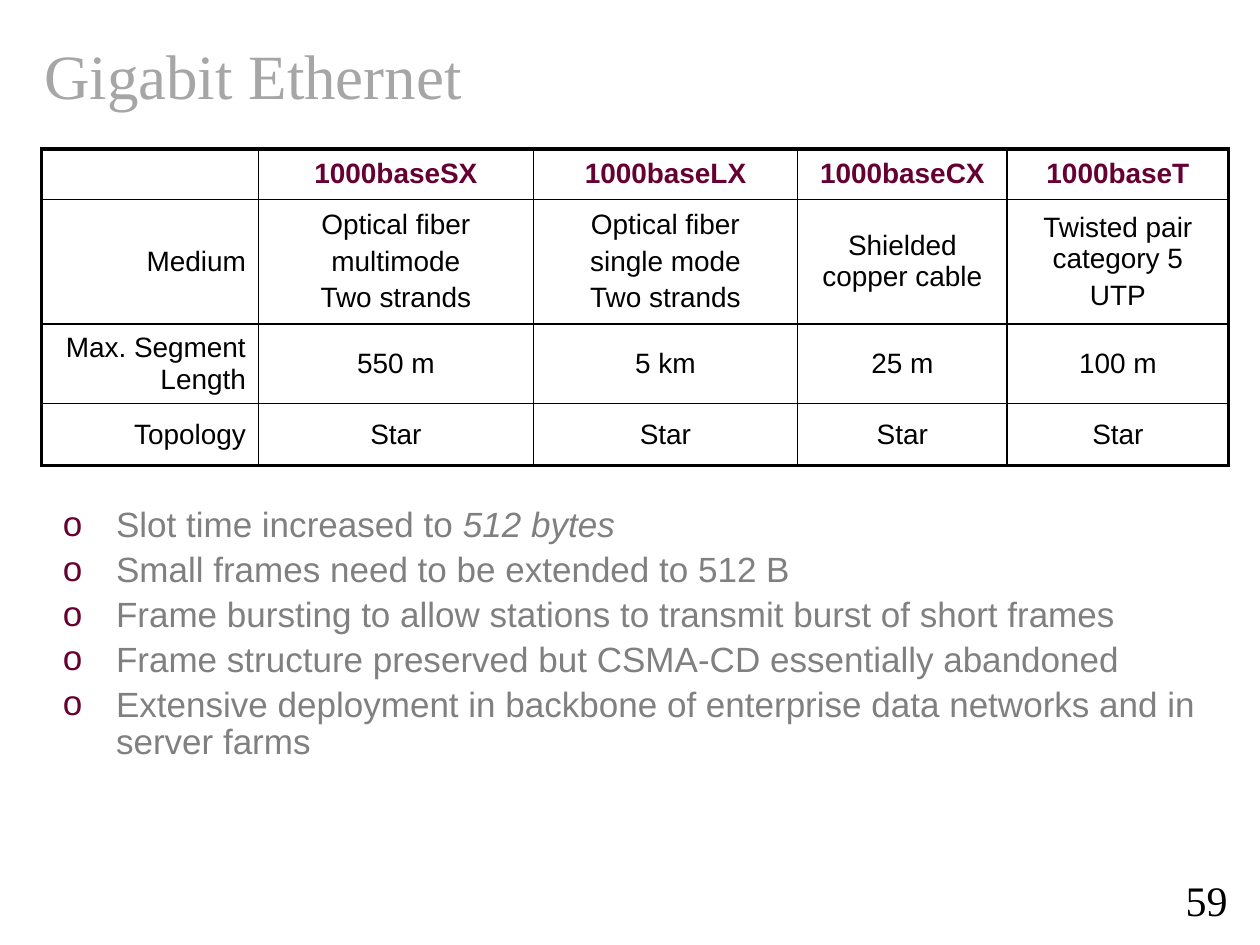
from dataclasses import dataclass

from lxml import etree
from pptx import Presentation
from pptx import util as u
from pptx.dml.color import RGBColor
from pptx.enum import text
from pptx.oxml import ns


@dataclass(frozen=True)
class Theme:
    serif: str = "Times New Roman"
    sans: str = "Arial"
    black: str = "000000"
    accent: str = "660033"
    title_gray: str = "A6A6A6"
    body_gray: str = "808080"
    title_size: float = 36
    number_size: float = 24
    body_size: float = 20
    table_size: float = 16
    thick: float = 2.25
    thin: float = 1


T = Theme()
AL = text.PP_ALIGN
MIDDLE = text.MSO_ANCHOR.MIDDLE

COLUMNS = [4.37, 5.54, 5.33, 4.22, 4.47]
ROWS = [0.87, 2.38, 1.51, 1.24]
CELLS = [
    ["", "1000baseSX", "1000baseLX", "1000baseCX", "1000baseT"],
    ["Medium", "Optical fiber\nmultimode\nTwo strands",
     "Optical fiber\nsingle mode\nTwo strands",
     "Shielded copper cable", "Twisted pair category 5\nUTP"],
    ["Max. Segment Length", "550 m", "5 km", "25 m", "100 m"],
    ["Topology"] + ["Star"] * 4,
]
BULLETS = [
    [("Slot time increased to ", False), ("512 bytes", True)],
    [("Small frames need to be extended to 512 B", False)],
    [("Frame bursting to allow stations to transmit burst of short frames", False)],
    [("Frame structure preserved but CSMA-CD essentially abandoned", False)],
    [("Extensive deployment in backbone of enterprise data networks and in "
      "server farms", False)],
]


def add_run(p, words, color, **fmt):
    r = p.add_run()
    r.text = words
    r.font.color.rgb = RGBColor.from_string(color)
    for key, value in fmt.items():
        setattr(r.font, key, value)


def add_box(slide, box, anchor=text.MSO_ANCHOR.TOP):
    sp = slide.shapes.add_textbox(*map(u.Cm, box))
    tf = sp.text_frame
    tf.word_wrap = True
    tf.vertical_anchor = anchor
    return tf


def add_line(slide, box, words, color, size, align):
    p = add_box(slide, box, MIDDLE).paragraphs[0]
    p.alignment = align
    add_run(p, words, color, name=T.serif, size=u.Pt(size))


def set_borders(cell, widths):
    tcPr = cell._tc.get_or_add_tcPr()
    for side, width in widths.items():
        ln = etree.SubElement(tcPr, ns.qn(f"a:ln{side}"), w=str(u.Pt(width)))
        fill = etree.SubElement(ln, ns.qn("a:solidFill"))
        etree.SubElement(fill, ns.qn("a:srgbClr"), val=T.black)


def fill_cell(cell, words, align, color, bold):
    cell.vertical_anchor = MIDDLE
    tf = cell.text_frame
    for i, line in enumerate(words.split("\n")):
        p = tf.add_paragraph() if i else tf.paragraphs[0]
        p.alignment = align
        if i:
            p.space_before = u.Pt(3.2)
        add_run(p, line, color, name=T.sans, size=u.Pt(T.table_size), bold=bold)


def add_comparison(slide, left, top):
    frame = slide.shapes.add_table(
        len(ROWS), len(COLUMNS), u.Cm(left), u.Cm(top),
        u.Cm(sum(COLUMNS)), u.Cm(sum(ROWS)))
    tbl = frame.table
    tbl.first_row = tbl.horz_banding = False
    for col, width in zip(tbl.columns, COLUMNS):
        col.width = u.Cm(width)
    for row, height in zip(tbl.rows, ROWS):
        row.height = u.Cm(height)
    last_row, last_col = len(ROWS) - 1, len(COLUMNS) - 1
    for i, row in enumerate(CELLS):
        for j, words in enumerate(row):
            cell = tbl.cell(i, j)
            outer = {"L": j == 0, "R": j == last_col,
                     "T": i == 0, "B": i == last_row}
            set_borders(cell, {side: T.thick if edge else T.thin
                               for side, edge in outer.items()})
            cell.fill.background()
            fill_cell(cell, words, AL.CENTER if j else AL.RIGHT,
                      T.black if i else T.accent, i == 0)


def set_bullet(p):
    pPr = p._p.get_or_add_pPr()
    indent = u.Cm(1.07)
    pPr.set("marL", str(indent))
    pPr.set("indent", str(-indent))
    color = etree.SubElement(pPr, ns.qn("a:buClr"))
    etree.SubElement(color, ns.qn("a:srgbClr"), val=T.accent)
    etree.SubElement(pPr, ns.qn("a:buFont"), typeface=T.sans)
    etree.SubElement(pPr, ns.qn("a:buChar"), char="o")


def add_bullets(slide, box):
    tf = add_box(slide, box)
    for i, runs in enumerate(BULLETS):
        p = tf.add_paragraph() if i else tf.paragraphs[0]
        set_bullet(p)
        p.line_spacing = 0.9
        if i:
            p.space_before = u.Pt(4)
        for words, italic in runs:
            add_run(p, words, T.body_gray, name=T.sans,
                    size=u.Pt(T.body_size), italic=italic)


def main():
    prs = Presentation()
    prs.slide_width, prs.slide_height = u.Cm(25.4), u.Cm(19.05)
    slide = prs.slides.add_slide(prs.slide_layouts[6])
    add_line(slide, (0.64, 0.64, 23.7, 1.7), "Gigabit Ethernet",
             T.title_gray, T.title_size, AL.LEFT)
    add_comparison(slide, 0.84, 3)
    add_bullets(slide, (1.02, 10.11, 23.67, 6.15))
    add_line(slide, (21.82, 17.48, 3.18, 1.3), "59",
             T.black, T.number_size, AL.RIGHT)
    prs.save("out.pptx")


if __name__ == "__main__":
    main()
